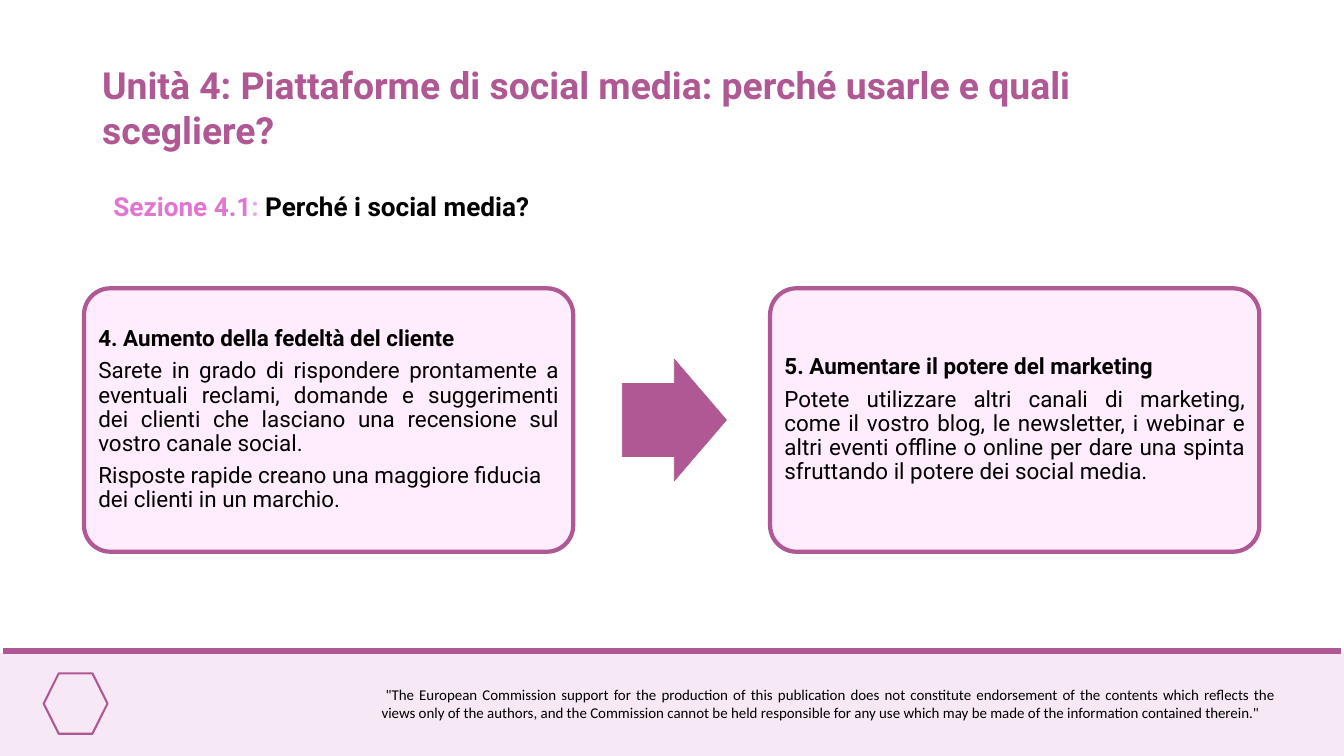
from lxml import etree
from pptx import Presentation
from pptx.dml.color import RGBColor
from pptx.enum.shapes import MSO_CONNECTOR, MSO_SHAPE
from pptx.enum.text import MSO_ANCHOR, MSO_AUTO_SIZE, PP_ALIGN
from pptx.oxml.ns import qn
from pptx.util import Inches, Pt

PLUM = RGBColor(0xB0, 0x58, 0x94)
PINK = RGBColor(0xE0, 0x76, 0xD1)
PALE_PINK = RGBColor(0xEC, 0xAA, 0xE3)
CARD = RGBColor(0xFF, 0xEC, 0xFC)
BAND = RGBColor(0xF6, 0xE9, 0xF5)
BLACK = RGBColor(0, 0, 0)
LEFT, JUSTIFY = PP_ALIGN.LEFT, PP_ALIGN.JUSTIFY
TOP, MIDDLE = MSO_ANCHOR.TOP, MSO_ANCHOR.MIDDLE

CARD_W, CARD_H = Inches(7.28), Inches(3.92)
CARD_X, CARD_Y = Inches(1.25), Inches(4.29)
CARD_STEP = Inches(10.21)
ARROW_W, ARROW_H = Inches(1.55), Inches(1.81)
BAND_Y = Inches(9.72)

CARDS = [
    [("4. Aumento della fedeltà del cliente", True, JUSTIFY),
     ("Sarete in grado di rispondere prontamente a eventuali reclami, domande e "
      "suggerimenti dei clienti che lasciano una recensione sul vostro canale social.",
      False, JUSTIFY),
     ("Risposte rapide creano una maggiore fiducia dei clienti in un marchio.",
      False, LEFT)],
    [("5. Aumentare il potere del marketing", True, JUSTIFY),
     ("Potete utilizzare altri canali di marketing, come il vostro blog, le newsletter, "
      "i webinar e altri eventi offline o online per dare una spinta sfruttando il "
      "potere dei social media.", False, JUSTIFY)],
]


def set_font(font, size, color, bold=False, name="Roboto"):
    font.name, font.size, font.bold = name, Pt(size), bold
    font.color.rgb = color


def add_box(kind, x, y, w, h, fill, line=None, width=0):
    sp = s.shapes.add_shape(kind, x, y, w, h)
    sp.shadow.inherit = False
    if fill is None:
        sp.fill.background()
    else:
        sp.fill.solid()
        sp.fill.fore_color.rgb = fill
    if line is None:
        sp.line.fill.background()
    else:
        sp.line.color.rgb = line
        sp.line.width = Pt(width)
    return sp


prs = Presentation()
prs.slide_width, prs.slide_height = Inches(20), Inches(11.25)
s = prs.slides.add_slide(prs.slide_layouts[5])

add_box(MSO_SHAPE.RECTANGLE, 0, BAND_Y, prs.slide_width, prs.slide_height - BAND_Y, BAND)
rule = s.shapes.add_connector(MSO_CONNECTOR.STRAIGHT, Inches(0.05), Inches(9.69),
                              Inches(19.95), Inches(9.69))
rule.line.color.rgb = PLUM
rule.line.width = Pt(6.75)
etree.SubElement(rule.element.spPr, qn("a:effectLst"))
add_box(MSO_SHAPE.HEXAGON, Inches(0.65), Inches(10.02), Inches(0.95), Inches(0.9),
        None, PLUM, 2.25)

tf = s.shapes.add_textbox(Inches(5.58), Inches(10.15), Inches(13.5), Inches(0.64)).text_frame
tf.word_wrap = True
p = tf.paragraphs[0]
p.text = ('"The European Commission support for the production of this publication does not '
          'constitute endorsement of the contents which reflects the views only of the '
          'authors, and the Commission cannot be held responsible for any use which may be '
          'made of the information contained therein."')
p.alignment = JUSTIFY
p._p.get_or_add_pPr().set("indent", str(Inches(0.06)))
set_font(p.font, 16, BLACK, name="Calibri")

title = s.shapes.title
title.left, title.top = Inches(1.42), Inches(0.88)
title.width, title.height = Inches(16.75), Inches(1.45)
tf = title.text_frame
tf.auto_size, tf.word_wrap = MSO_AUTO_SIZE.NONE, True
tf.vertical_anchor = TOP
p = tf.paragraphs[0]
p.text = "Unità 4: Piattaforme di social media: perché usarle e quali scegliere?"
p.alignment = LEFT
set_font(p.font, 40, PLUM, True)

tf = s.shapes.add_textbox(Inches(1.59), Inches(2.79), Inches(16.41), Inches(0.57)).text_frame
tf.word_wrap = True
for text, color in [("Sezione 4.1", PINK), (": ", PALE_PINK),
                    ("Perché i social media?", BLACK)]:
    r = tf.paragraphs[0].add_run()
    r.text = text
    set_font(r.font, 28, color, True)

for i, paragraphs in enumerate(CARDS):
    sp = add_box(MSO_SHAPE.ROUNDED_RECTANGLE, CARD_X + i * CARD_STEP, CARD_Y,
                 CARD_W, CARD_H, CARD, PLUM, 4.5)
    sp.adjustments[0] = 0.1
    tf = sp.text_frame
    tf.word_wrap = True
    tf.vertical_anchor = MIDDLE
    tf.margin_left = tf.margin_right = tf.margin_top = tf.margin_bottom = Inches(0.1)
    for j, (text, bold, align) in enumerate(paragraphs):
        p = tf.add_paragraph() if j else tf.paragraphs[0]
        p.text = text
        p.alignment = align
        p.line_spacing = 0.9
        p.space_after = Pt(8.4)
        set_font(p.font, 24, BLACK, bold)

arrow = add_box(MSO_SHAPE.RIGHT_ARROW, Inches(9.26), CARD_Y + (CARD_H - ARROW_H) // 2,
                ARROW_W, ARROW_H, PLUM, PLUM, 0.75)
arrow.adjustments[0] = 0.6
arrow.adjustments[1] = 0.5

prs.save("out.pptx")
